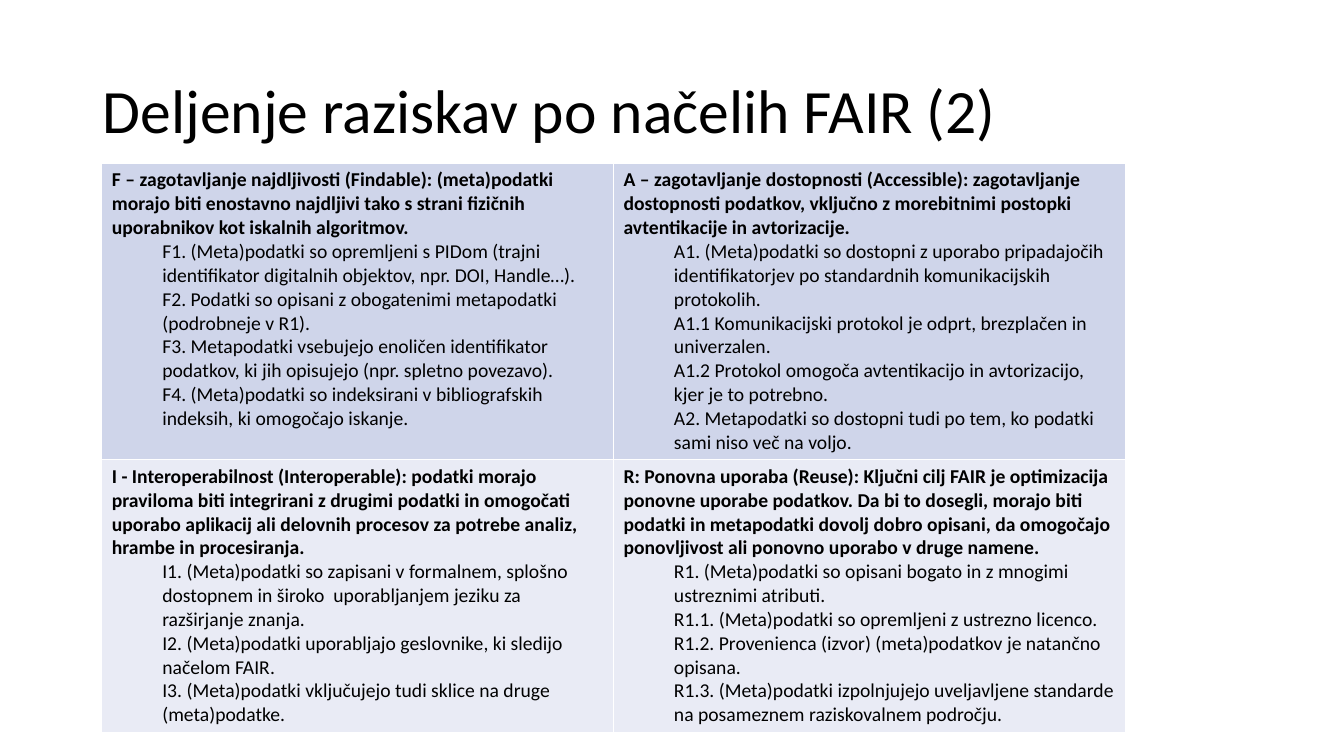
from lxml.etree import SubElement
from pptx import Presentation
from pptx.dml.color import RGBColor
from pptx.enum.text import MSO_ANCHOR, MSO_AUTO_SIZE, PP_ALIGN
from pptx.oxml import parse_xml
from pptx.oxml.ns import nsdecls, qn
from pptx.util import Inches, Pt

TITLE = "Deljenje raziskav po načelih FAIR (2)"
PRINCIPLES = [
    [
        [
            "F – zagotavljanje najdljivosti (Findable): (meta)podatki morajo biti enostavno najdljivi tako s strani fizičnih uporabnikov kot iskalnih algoritmov.",
            "F1. (Meta)podatki so opremljeni s PIDom (trajni identifikator digitalnih objektov, npr. DOI, Handle…).",
            "F2. Podatki so opisani z obogatenimi metapodatki (podrobneje v R1).",
            "F3. Metapodatki vsebujejo enoličen identifikator podatkov, ki jih opisujejo (npr. spletno povezavo).",
            "F4. (Meta)podatki so indeksirani v bibliografskih indeksih, ki omogočajo iskanje.",
        ],
        [
            "A – zagotavljanje dostopnosti (Accessible): zagotavljanje dostopnosti podatkov, vključno z morebitnimi postopki avtentikacije in avtorizacije.",
            "A1. (Meta)podatki so dostopni z uporabo pripadajočih identifikatorjev po standardnih komunikacijskih protokolih.",
            "A1.1 Komunikacijski protokol je odprt, brezplačen in univerzalen.",
            "A1.2 Protokol omogoča avtentikacijo in avtorizacijo, kjer je to potrebno.",
            "A2. Metapodatki so dostopni tudi po tem, ko podatki sami niso več na voljo.",
        ],
    ],
    [
        [
            "I - Interoperabilnost (Interoperable): podatki morajo praviloma biti integrirani z drugimi podatki in omogočati uporabo aplikacij ali delovnih procesov za potrebe analiz, hrambe in procesiranja.",
            "I1. (Meta)podatki so zapisani v formalnem, splošno dostopnem in široko  uporabljanjem jeziku za razširjanje znanja.",
            "I2. (Meta)podatki uporabljajo geslovnike, ki sledijo načelom FAIR.",
            "I3. (Meta)podatki vključujejo tudi sklice na druge (meta)podatke.",
        ],
        [
            "R: Ponovna uporaba (Reuse): Ključni cilj FAIR je optimizacija ponovne uporabe podatkov. Da bi to dosegli, morajo biti podatki in metapodatki dovolj dobro opisani, da omogočajo ponovljivost ali ponovno uporabo v druge namene.",
            "R1. (Meta)podatki so opisani bogato in z mnogimi ustreznimi atributi.",
            "R1.1. (Meta)podatki so opremljeni z ustrezno licenco.",
            "R1.2. Provenienca (izvor) (meta)podatkov je natančno opisana.",
            "R1.3. (Meta)podatki izpolnjujejo uveljavljene standarde na posameznem raziskovalnem področju.",
        ],
    ],
]
ROW_HEIGHTS = [2.94, 2.7]
ROW_FILLS = ["CFD5EA", "E9EBF5"]


def color(value):
    """Turn a hex string into a colour."""
    return RGBColor.from_string(value)


class FairPage:
    """Holds the text style and the current slide."""

    font, ink, border = "Calibri", "000000", "FFFFFF"

    def __init__(self, page):
        """Keep the slide that is being filled."""
        self.page = page

    def style(self, para, size, bold=False):
        """Format every run of a paragraph."""
        for span in para.runs:
            span.font.name = self.font
            span.font.size = Pt(size)
            span.font.bold = bold
            span.font.color.rgb = color(self.ink)

    def title(self, text, left, top, width, height):
        """Place and format the title placeholder."""
        box = self.page.shapes.title
        box.left, box.top = Inches(left), Inches(top)
        box.width, box.height = Inches(width), Inches(height)
        frame = box.text_frame
        frame.text = text
        frame.word_wrap = True
        frame.auto_size = MSO_AUTO_SIZE.NONE
        frame.vertical_anchor = MSO_ANCHOR.MIDDLE
        para = frame.paragraphs[0]
        para.alignment = PP_ALIGN.LEFT
        para.line_spacing = 0.9
        self.style(para, 44)

    def table(self, rows, left, top, width, heights, fills):
        """Add a table with one fill for each row."""
        count = len(rows[0])
        grid = self.page.shapes.add_table(
            len(rows), count, Inches(left), Inches(top), Inches(width), Inches(sum(heights))
        ).table
        grid.first_row = grid.horz_banding = False
        for column in grid.columns:
            column.width = Inches(width / count)
        for index, (texts, height, fill) in enumerate(zip(rows, heights, fills)):
            grid.rows[index].height = Inches(height)
            for position, lines in enumerate(texts):
                self.cell(grid.cell(index, position), lines, fill)

    def cell(self, cell, lines, fill):
        """Fill a cell with a bold heading and indented points."""
        cell.fill.solid()
        cell.fill.fore_color.rgb = color(fill)
        self.borders(cell)
        frame = cell.text_frame
        frame.text = "\n".join(lines)
        for index, para in enumerate(frame.paragraphs):
            self.style(para, 14, bold=index == 0)
            if index:
                para.level = 1
                properties = para._p.get_or_add_pPr()
                properties.set("marL", str(Inches(0.5)))
                properties.set("indent", "0")

    def borders(self, cell):
        """Draw thin lines on all four sides of a cell."""
        properties = cell._tc.get_or_add_tcPr()
        for index, side in enumerate(("lnL", "lnR", "lnT", "lnB")):
            line = parse_xml(f'<a:{side} {nsdecls("a")} w="{Pt(1)}"/>')
            solid = SubElement(line, qn("a:solidFill"))
            SubElement(solid, qn("a:srgbClr")).set("val", self.border)
            properties.insert(index, line)


def main():
    """Build and save the slide."""
    deck = Presentation()
    deck.slide_width, deck.slide_height = Inches(13.33), Inches(7.5)
    page = FairPage(deck.slides.add_slide(deck.slide_layouts[5]))
    page.title(TITLE, 0.92, 0.4, 11.5, 1.45)
    page.table(PRINCIPLES, 1.01, 1.62, 10.15, ROW_HEIGHTS, ROW_FILLS)
    deck.save("out.pptx")


if __name__ == "__main__":
    main()
